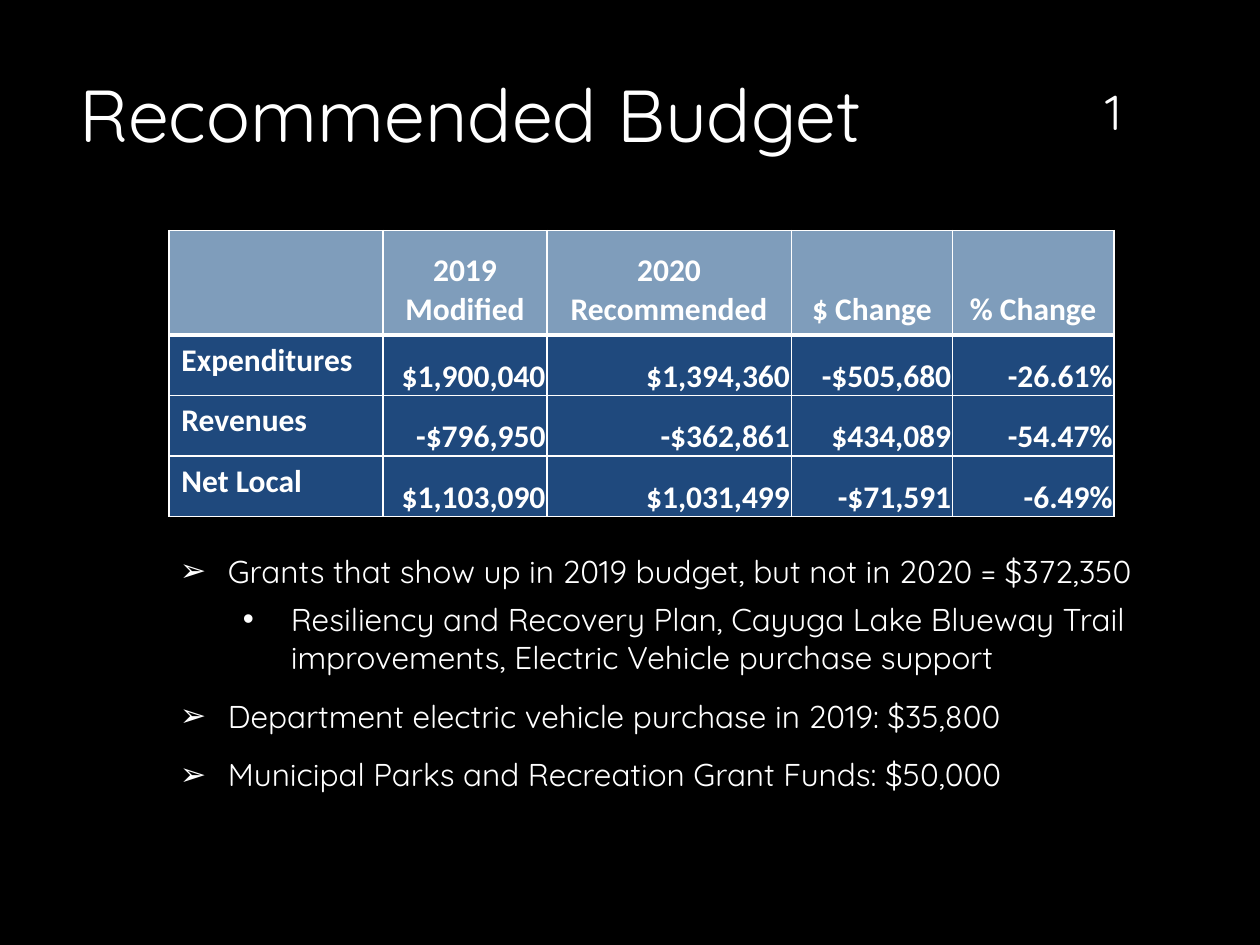
"""Builds the Recommended Budget slide with its budget table and grant notes."""
from lxml import etree
from pptx import Presentation
from pptx.dml.color import RGBColor
from pptx.enum import text
from pptx.oxml import ns
from pptx.util import Inches, Pt

BLACK = RGBColor(0, 0, 0)
WHITE = RGBColor(255, 255, 255)
HEADER_BLUE = RGBColor(0x7F, 0x9D, 0xBB)
ROW_BLUE = RGBColor(0x1F, 0x49, 0x7D)
ALIGN, ANCHOR = text.PP_ALIGN, text.MSO_ANCHOR

TITLE = "Recommended Budget"
PAGE_NUMBER = "1"
BUDGET = [
    ["", "2019\nModified", "2020\nRecommended", "$ Change", "% Change"],
    ["Expenditures", "$1,900,040", "$1,394,360", "-$505,680", "-26.61%"],
    ["Revenues", "-$796,950", "-$362,861", "$434,089", "-54.47%"],
    ["Net Local", "$1,103,090", "$1,031,499", "-$71,591", "-6.49%"],
]
COLUMN_WIDTHS = [1.7, 1.3, 1.94, 1.28, 1.28]
ROW_HEIGHTS = [0.83, 0.48, 0.48, 0.48]
NOTES = [
    (0, 0, "Grants that show up in 2019 budget, but not in 2020 = $372,350"),
    (1, 6, "Resiliency and Recovery Plan, Cayuga Lake Blueway Trail "
           "improvements, Electric Vehicle purchase support"),
    (0, 12, "Department electric vehicle purchase in 2019: $35,800"),
    (0, 12, "Municipal Parks and Recreation Grant Funds: $50,000"),
]
BULLETS = ["➢", "•"]
NUMBER_MARGINS = {"margin_left": Inches(0.01), "margin_top": Inches(0.01),
                  "margin_right": Inches(0.01), "margin_bottom": 0}


def apply(target, formats):
    for name, value in formats.items():
        setattr(target, name, value)


def style(paragraph, size, face="Quicksand", bold=False):
    apply(paragraph.font, {"size": Pt(size), "name": face, "bold": bold})
    paragraph.font.color.rgb = WHITE


def add_text(slide, place, content, size=18, align=ALIGN.LEFT, anchor=ANCHOR.TOP):
    frame = slide.shapes.add_textbox(*map(Inches, place)).text_frame
    apply(frame, {"word_wrap": True, "vertical_anchor": anchor, "text": content})
    for paragraph in frame.paragraphs:
        paragraph.alignment = align
        style(paragraph, size)
    return frame


def set_bullet(paragraph, level):
    properties = paragraph._p.get_or_add_pPr()
    properties.set("marL", str(Inches(0.38 + 0.5 * level)))
    properties.set("indent", str(-Inches(0.38)))
    font = etree.Element(ns.qn("a:buFont"), typeface="Arial")
    bullet = etree.Element(ns.qn("a:buChar"), char=BULLETS[level])
    default_font = properties.find(ns.qn("a:defRPr"))
    for element in (font, bullet):
        if default_font is None:
            properties.append(element)
        else:
            default_font.addprevious(element)


def set_borders(cell, bottom_width):
    properties = cell._tc.get_or_add_tcPr()
    widths = {"L": 1, "R": 1, "T": 1, "B": bottom_width}
    for index, (side, width) in enumerate(widths.items()):
        line = etree.Element(ns.qn(f"a:ln{side}"), w=str(Pt(width)))
        fill = etree.SubElement(line, ns.qn("a:solidFill"))
        etree.SubElement(fill, ns.qn("a:srgbClr"), val=str(WHITE))
        properties.insert(index, line)


def add_budget(slide):
    place = map(Inches, (1.34, 1.83, sum(COLUMN_WIDTHS), sum(ROW_HEIGHTS)))
    table = slide.shapes.add_table(len(BUDGET), len(COLUMN_WIDTHS), *place).table
    for column, width in zip(table.columns, COLUMN_WIDTHS):
        column.width = Inches(width)
    for row, height in zip(table.rows, ROW_HEIGHTS):
        row.height = Inches(height)
    for r, entries in enumerate(BUDGET):
        for c, entry in enumerate(entries):
            cell = table.cell(r, c)
            header, label = r == 0, c == 0
            cell.text = entry
            cell.vertical_anchor = ANCHOR.TOP if label else ANCHOR.BOTTOM
            if not header and not label:
                apply(cell, NUMBER_MARGINS)
            cell.fill.solid()
            cell.fill.fore_color.rgb = HEADER_BLUE if header else ROW_BLUE
            set_borders(cell, 3 if header else 1)
            for paragraph in cell.text_frame.paragraphs:
                paragraph.alignment = (ALIGN.CENTER if header else
                                       ALIGN.LEFT if label else ALIGN.RIGHT)
                style(paragraph, 18, "Calibri", True)


def main():
    deck = Presentation()
    apply(deck, {"slide_width": Inches(10), "slide_height": Inches(7.5)})
    slide = deck.slides.add_slide(deck.slide_layouts[6])
    slide.background.fill.solid()
    slide.background.fill.fore_color.rgb = BLACK

    add_text(slide, (0.53, 0.5, 7.72, 1.53), TITLE, 42)
    add_budget(slide)
    add_text(slide, (8.49, 0.32, 0.69, 0.84), PAGE_NUMBER, 28,
             ALIGN.CENTER, ANCHOR.BOTTOM)
    notes = add_text(slide, (1.33, 4.33, 8.16, 2.04),
                     "\n".join(note for _, _, note in NOTES))
    for paragraph, (level, space, _) in zip(notes.paragraphs, NOTES):
        set_bullet(paragraph, level)
        apply(paragraph, {"level": level, "space_before": Pt(space)})
    deck.save("out.pptx")


if __name__ == "__main__":
    main()
